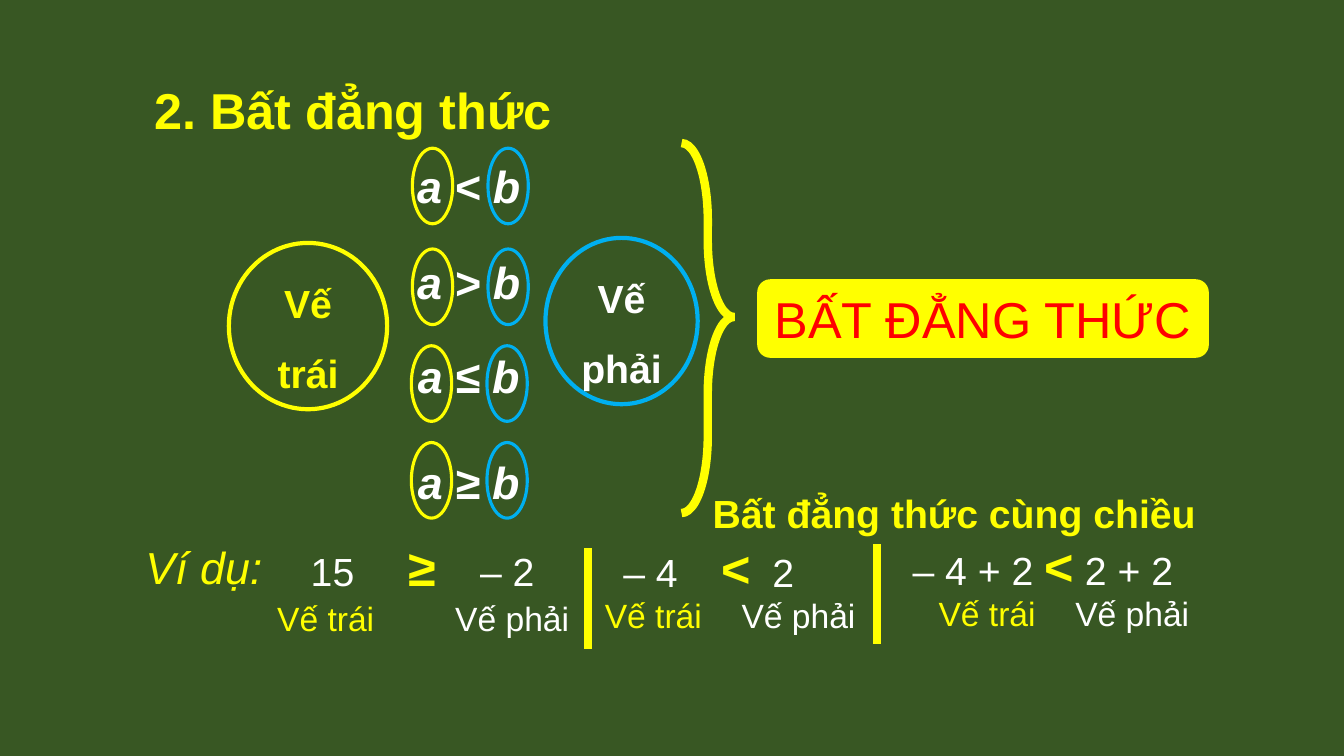
from lxml import etree
from pptx import Presentation
from pptx.dml.color import RGBColor
from pptx.enum.shapes import MSO_CONNECTOR, MSO_SHAPE
from pptx.enum.text import MSO_ANCHOR, MSO_AUTO_SIZE, PP_ALIGN
from pptx.oxml.ns import qn
from pptx.util import Emu, Pt

PX = 9144  # 100 px to the inch
FONT = "Arial"
COLORS = {
    "board": "385723",
    "yellow": "FFFF00",
    "white": "FFFFFF",
    "blue": "00B0F0",
    "red": "FF0000",
}
LEFT, CENTER = PP_ALIGN.LEFT, PP_ALIGN.CENTER
TOP, MIDDLE = MSO_ANCHOR.TOP, MSO_ANCHOR.MIDDLE
FIT_SHAPE = MSO_AUTO_SIZE.SHAPE_TO_FIT_TEXT
OVAL, ROUNDED = MSO_SHAPE.OVAL, MSO_SHAPE.ROUNDED_RECTANGLE
BRACE = MSO_SHAPE.RIGHT_BRACE
STRAIGHT = MSO_CONNECTOR.STRAIGHT


def px(*lengths):
    return [Emu(length * PX) for length in lengths]


def color(name):
    return RGBColor.from_string(COLORS[name])


def style_font(font, size, color_name, bold=False, italic=False):
    font.name = FONT
    font.size = Pt(size)
    font.bold = bold
    font.italic = italic
    font.color.rgb = color(color_name)


def write(shape, text, size, color_name, align=CENTER, anchor=MIDDLE,
          wrap=True, bold=False, italic=False):
    frame = shape.text_frame
    frame.word_wrap = wrap
    frame.vertical_anchor = anchor
    paragraph = frame.paragraphs[0]
    paragraph.text = text
    paragraph.alignment = align
    style_font(paragraph.font, size, color_name, bold, italic)
    return paragraph


def add_figure(slide, kind, box, fill=None, line=None, width=0):
    figure = slide.shapes.add_shape(kind, *px(*box))
    figure.shadow.inherit = False
    if fill:
        figure.fill.solid()
        figure.fill.fore_color.rgb = color(fill)
    else:
        figure.fill.background()
    if line:
        figure.line.color.rgb = color(line)
        figure.line.width = Pt(width)
        # Pointed corners
        etree.SubElement(figure.line._get_or_add_ln(), qn("a:miter"), lim="800000")
    else:
        figure.line.fill.background()
    return figure


def add_label(slide, box, text, size, color_name, **style):
    label = add_figure(slide, ROUNDED, box)
    write(label, text, size, color_name, **style)


def add_side_circle(slide, box, text, line, text_color):
    circle = add_figure(slide, OVAL, box, line=line, width=3)
    paragraph = write(circle, text, 28, text_color, bold=True)
    paragraph.line_spacing = 1.5


def add_divider(slide, x, top, bottom):
    divider = slide.shapes.add_connector(STRAIGHT, *px(x, top, x, bottom))
    divider.line.color.rgb = color("yellow")
    divider.line.width = Pt(6)
    properties = divider._element.spPr
    etree.SubElement(properties, qn("a:effectLst"))


def add_example(slide, box, indent, tabs, left_side, sign, right_side):
    """One inequality, its sign and right side placed on tab stops."""
    frame = add_figure(slide, ROUNDED, box).text_frame
    frame.word_wrap = True
    frame.vertical_anchor = MIDDLE
    frame.margin_left = Emu(indent * PX)
    paragraph = frame.paragraphs[0]
    paragraph.alignment = LEFT
    tab_list = etree.SubElement(paragraph._p.get_or_add_pPr(), qn("a:tabLst"))
    for position in tabs:
        etree.SubElement(tab_list, qn("a:tab"), pos=str(position * PX), algn="l")
    for text, size, color_name, bold in (
        (left_side + "\t", 28, "white", False),
        (sign, 36, "yellow", True),
        ("\t" + right_side, 28, "white", False),
    ):
        run = paragraph.add_run()
        run.text = text
        style_font(run.font, size, color_name, bold)


def add_side_names(slide, left_x, right_x, top):
    add_label(slide, (left_x, top, 178, 71), "Vế trái", 24, "yellow")
    add_label(slide, (right_x, top, 178, 71), "Vế phải", 24, "white")


def main():
    presentation = Presentation()
    presentation.slide_width, presentation.slide_height = px(1333, 750)
    slide = presentation.slides.add_slide(presentation.slide_layouts[5])
    slide.background.fill.solid()
    slide.background.fill.fore_color.rgb = color("board")

    # Title
    title = slide.shapes.title
    title.left, title.top, title.width, title.height = px(143, 73, 419, 71)
    write(title, "2. Bất đẳng thức", 36, "yellow", align=LEFT, anchor=TOP,
          wrap=False, bold=True)
    title.text_frame.auto_size = FIT_SHAPE

    # The four relations, each side ringed in its colour
    for sign, text_top, ring_left, ring_top in (
        ("<", 147, 409, 147), (">", 242, 409, 247),
        ("≤", 335, 408, 343), ("≥", 440, 408, 439),
    ):
        add_label(slide, (310, text_top, 310, 75), f"a {sign} b", 32, "white",
                  bold=True, italic=True)
        for offset, ring_color in ((0, "yellow"), (75, "blue")):
            add_figure(slide, OVAL, (ring_left + offset, ring_top, 40, 75),
                       line=ring_color, width=2.25)
    add_side_circle(slide, (227, 241, 157, 165), "Vế trái", "yellow", "yellow")
    add_side_circle(slide, (541, 236, 151, 165), "Vế phải", "blue", "white")

    # Brace leading to the name of all four
    brace = add_figure(slide, BRACE, (676, 142, 52, 367), line="yellow", width=6)
    brace.adjustments[0], brace.adjustments[1] = 1.46, 0.47
    name = add_figure(slide, ROUNDED, (751, 277, 448, 78), fill="yellow")
    write(name, "BẤT ĐẲNG THỨC", 36, "red")

    # Examples
    add_label(slide, (106, 532, 193, 61), "Ví dụ:", 32, "yellow", italic=True)
    add_example(slide, (255, 529, 329, 66), 50, (97, 168), "15", "≥", "– 2")
    add_example(slide, (558, 530, 290, 66), 57, (97, 148), "– 4", "<", "2")
    add_example(slide, (816, 528, 436, 66), 86, (131, 171),
                "– 4 + 2", "<", "2 + 2")
    add_side_names(slide, 234, 419, 578)
    add_side_names(slide, 559, 703, 575)
    add_side_names(slide, 890, 1034, 573)
    add_divider(slide, 583, 544, 644)
    add_divider(slide, 870, 540, 639)
    same_direction = slide.shapes.add_textbox(*px(697, 481, 505, 57))
    write(same_direction, "Bất đẳng thức cùng chiều", 28, "yellow",
          align=LEFT, anchor=TOP, wrap=False, bold=True)
    same_direction.text_frame.auto_size = FIT_SHAPE

    presentation.save("out.pptx")


if __name__ == "__main__":
    main()
